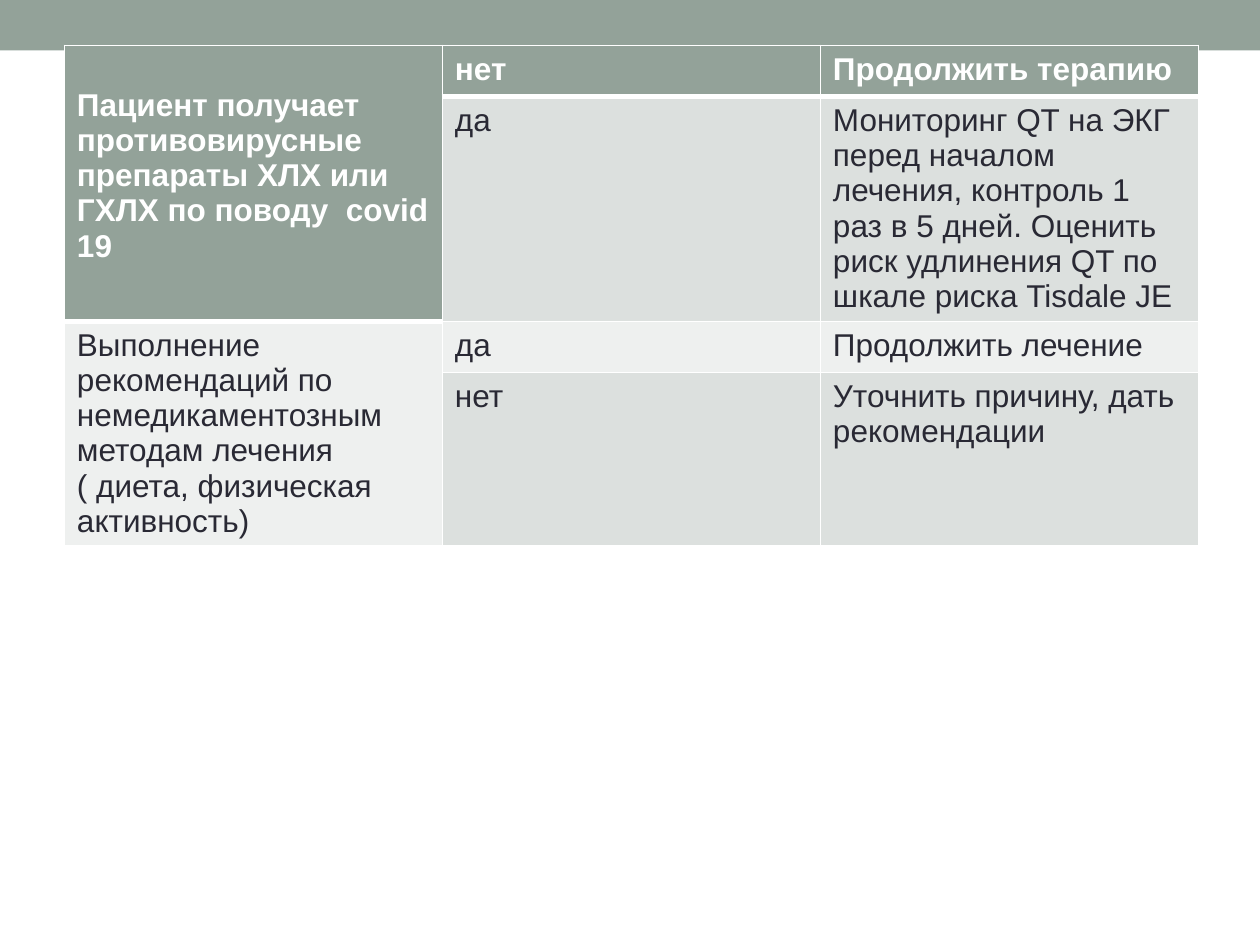
from lxml.etree import SubElement
from pptx import Presentation
from pptx.dml.color import RGBColor
from pptx.enum.shapes import MSO_SHAPE as Shape
from pptx.oxml.ns import qn
from pptx.util import Pt

SAGE = RGBColor(0x93, 0xA2, 0x99)
BAND_DARK = RGBColor(0xDC, 0xE0, 0xDE)
BAND_LIGHT = RGBColor(0xEE, 0xF0, 0xEF)
INK = RGBColor(0x29, 0x29, 0x34)
WHITE = RGBColor(0xFF, 0xFF, 0xFF)

FONT = "Arial"
TEXT_SIZE = Pt(18)
COLUMN_WIDTH = Pt(216)
ROW_HEIGHTS = [29.2, 127.4, 29.2, 99.2]
ROW_FILLS = [SAGE, BAND_DARK, BAND_LIGHT, BAND_DARK]
MERGED_ROWS = [(0, 1), (2, 3)]

ROWS = [
    ["Пациент получает противовирусные препараты ХЛХ или ГХЛХ по поводу  covid 19",
     "нет", "Продолжить терапию"],
    ["", "да",
     "Мониторинг QT на ЭКГ перед началом лечения, контроль 1 раз в 5 дней. "
     "Оценить риск удлинения QT по шкале риска Tisdale JE"],
    ["Выполнение рекомендаций по немедикаментозным методам лечения "
     "( диета, физическая активность)",
     "да", "Продолжить лечение"],
    ["", "нет", "Уточнить причину, дать рекомендации"],
]


def add_top_band(slide, width):
    sp = slide.shapes.add_shape(Shape.RECTANGLE, 0, 0, width, Pt(28.8))
    sp.shadow.inherit = False
    sp.fill.solid()
    sp.fill.fore_color.rgb = SAGE
    sp.line.fill.background()


def set_borders(cell, bottom_width):
    """Draw white borders; call before filling, as tcPr wants lines first."""
    tc_pr = cell._tc.get_or_add_tcPr()
    for side in "LRTB":
        width = bottom_width if side == "B" else Pt(1)
        ln = SubElement(tc_pr, qn(f"a:ln{side}"), w=str(width))
        fill = SubElement(ln, qn("a:solidFill"))
        SubElement(fill, qn("a:srgbClr"), val=str(WHITE))


def format_cell(cell, text, fill, is_header):
    set_borders(cell, Pt(3) if is_header else Pt(1))
    cell.fill.solid()
    cell.fill.fore_color.rgb = fill
    p = cell.text_frame.paragraphs[0]
    p.text = text
    p.font.size = TEXT_SIZE
    for r in p.runs:
        r.font.name = FONT
        r.font.size = TEXT_SIZE
        r.font.bold = is_header
        r.font.color.rgb = WHITE if is_header else INK


def add_decision_table(slide):
    table = slide.shapes.add_table(
        len(ROWS), len(ROWS[0]), Pt(36.8), Pt(26),
        COLUMN_WIDTH * len(ROWS[0]), Pt(sum(ROW_HEIGHTS))).table
    for column in table.columns:
        column.width = COLUMN_WIDTH
    for i, (texts, height, fill) in enumerate(zip(ROWS, ROW_HEIGHTS, ROW_FILLS)):
        table.rows[i].height = Pt(height)
        for j, text in enumerate(texts):
            in_merged_header = j == 0 and i in MERGED_ROWS[0]
            is_header = i == 0 or in_merged_header
            format_cell(table.cell(i, j), text, SAGE if is_header else fill, is_header)
    for first, last in MERGED_ROWS:
        table.cell(first, 0).merge(table.cell(last, 0))
    table.cell(0, 0).margin_top = Pt(24)


def main():
    prs = Presentation()
    prs.slide_width, prs.slide_height = Pt(720), Pt(540)
    slide = prs.slides.add_slide(prs.slide_layouts[6])
    add_top_band(slide, prs.slide_width)
    add_decision_table(slide)
    prs.save("out.pptx")


if __name__ == "__main__":
    main()
